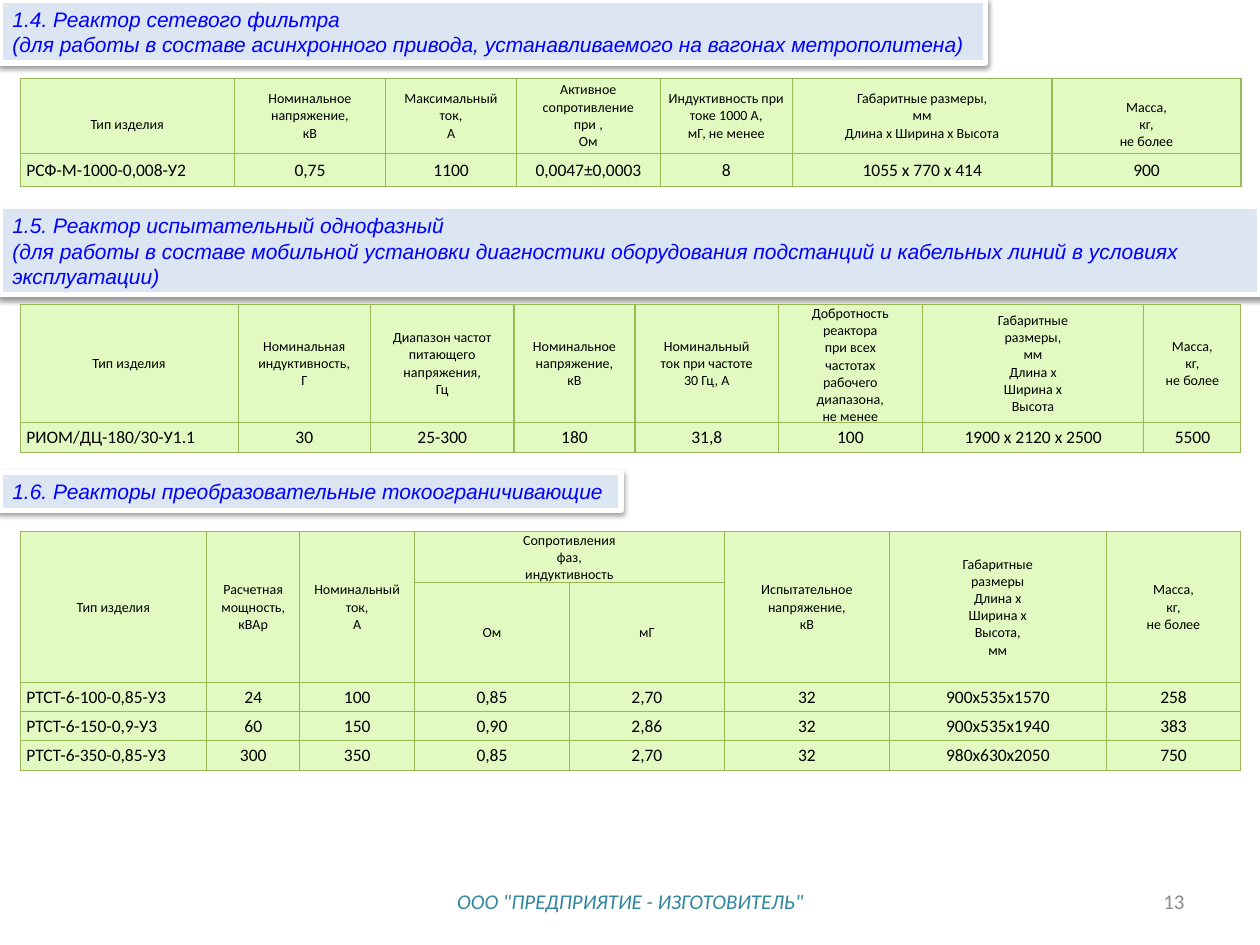
import pptx
import pptx.util
from lxml import etree
from pptx.dml.color import RGBColor
from pptx.enum.shapes import MSO_SHAPE
from pptx.enum.text import MSO_ANCHOR, MSO_AUTO_SIZE, PP_ALIGN
from pptx.oxml import parse_xml
from pptx.oxml.ns import nsdecls, qn

SLIDE_W = pptx.util.Inches(10)
SLIDE_H = pptx.util.Inches(7.5)
TABLE_LEFT = 1.6
HEAD_PT = 8
BODY_PT = 10
TITLE_PT = 12

BLACK = RGBColor(0, 0, 0)
WHITE = RGBColor(255, 255, 255)
BLUE = RGBColor(0, 0, 255)
PALE_BLUE = RGBColor(0xDC, 0xE6, 0xF2)
PALE_GREEN = RGBColor(0xE2, 0xFA, 0xC2)
GREEN = RGBColor(0x98, 0xB9, 0x55)
TEAL = RGBColor(0x31, 0x85, 0x9C)
GREY = RGBColor(0x8C, 0x8C, 0x8C)

MASS = "Масса,\nкг,\nне более"

FILTER_ROWS = [
    ["Тип изделия", "Номинальное напряжение,\nкВ", "Максимальный\nток,\nА",
     "Активное сопротивление\nпри ,\nОм", "Индуктивность при токе 1000 А,\nмГ, не менее",
     "Габаритные размеры,\nмм\nДлина х Ширина х Высота", MASS],
    ["РСФ-М-1000-0,008-У2", "0,75", "1100", "0,0047±0,0003", "8",
     "1055 х 770 х 414", "900"],
]
TEST_ROWS = [
    ["Тип изделия", "Номинальная\nиндуктивность,\nГ",
     "Диапазон частот\nпитающего\nнапряжения,\nГц", "Номинальное напряжение,\nкВ",
     "Номинальный\nток при частоте\n30 Гц, А",
     "Добротность\nреактора\nпри всех\nчастотах\nрабочего\nдиапазона,\nне менее",
     "Габаритные\nразмеры,\nмм\nДлина х\nШирина х\nВысота", MASS],
    ["РИОМ/ДЦ-180/30-У1.1", "30", "25-300", "180", "31,8", "100",
     "1900 х 2120 х 2500", "5500"],
]
LIMIT_ROWS = [
    ["Тип изделия", "Расчетная мощность, кВАр", "Номинальный ток,\nА",
     "Сопротивления\nфаз,\nиндуктивность", "", "Испытательное\nнапряжение,\nкВ",
     "Габаритные\nразмеры\nДлина x\nШирина x\nВысота,\nмм", MASS],
    ["", "", "", "Ом", "мГ", "", "", ""],
    ["РТСТ-6-100-0,85-У3", "24", "100", "0,85", "2,70", "32", "900х535х1570", "258"],
    ["РТСТ-6-150-0,9-У3", "60", "150", "0,90", "2,86", "32", "900х535х1940", "383"],
    ["РТСТ-6-350-0,85-У3", "300", "350", "0,85", "2,70", "32", "980х630х2050", "750"],
]


def across(percent):
    return round(SLIDE_W * percent / 100)


def down(percent):
    return round(SLIDE_H * percent / 100)


def write(tf, text, size=TITLE_PT, font="Calibri", color=BLACK, italic=False,
          align=PP_ALIGN.LEFT):
    for i, line in enumerate(text.split("\n")):
        p = tf.add_paragraph() if i else tf.paragraphs[0]
        p.alignment = align
        r = p.add_run()
        r.text = line
        r.font.size = pptx.util.Pt(size)
        r.font.name = font
        r.font.italic = italic
        r.font.color.rgb = color


def add_shadow(sp):
    sp.shadow.inherit = False
    effects = sp._element.spPr.find(qn("a:effectLst"))
    effects.append(parse_xml(
        f'<a:outerShdw {nsdecls("a")} blurRad="{pptx.util.Pt(3.1)}" '
        f'dist="{pptx.util.Pt(1.6)}" dir="5400000" rotWithShape="0">'
        '<a:srgbClr val="000000"><a:alpha val="38000"/></a:srgbClr></a:outerShdw>'))


def add_heading(s, top, width, height, text, wrap=False):
    sp = s.shapes.add_shape(MSO_SHAPE.RECTANGLE, 0, down(top), across(width), down(height))
    sp.fill.solid()
    sp.fill.fore_color.rgb = PALE_BLUE
    sp.line.color.rgb = WHITE
    sp.line.width = pptx.util.Pt(3)
    add_shadow(sp)
    tf = sp.text_frame
    tf.word_wrap = wrap
    tf.auto_size = MSO_AUTO_SIZE.SHAPE_TO_FIT_TEXT
    tf.vertical_anchor = MSO_ANCHOR.MIDDLE
    write(tf, text, font="Arial", color=BLUE, italic=True)


def format_cell(cell):
    cell.fill.solid()
    cell.fill.fore_color.rgb = PALE_GREEN
    cell.vertical_anchor = MSO_ANCHOR.MIDDLE
    cell.margin_left = cell.margin_right = pptx.util.Inches(0.05)
    cell.margin_top = cell.margin_bottom = 0
    tcPr = cell._tc.get_or_add_tcPr()
    for i, side in enumerate(("lnL", "lnR", "lnT", "lnB")):
        ln = etree.Element(qn(f"a:{side}"), w=str(pptx.util.Pt(0.75)))
        fill = etree.SubElement(ln, qn("a:solidFill"))
        etree.SubElement(fill, qn("a:srgbClr"), val=str(GREEN))
        tcPr.insert(i, ln)


def add_grid(s, top, widths, heights, rows, head_rows=1):
    frame = s.shapes.add_table(len(rows), len(widths), across(TABLE_LEFT), down(top),
                               across(sum(widths)), down(sum(heights)))
    table = frame.table
    table.first_row = table.horz_banding = False
    for column, width in zip(table.columns, widths):
        column.width = across(width)
    for row, height in zip(table.rows, heights):
        row.height = down(height)
    for i, values in enumerate(rows):
        for j, value in enumerate(values):
            cell = table.cell(i, j)
            format_cell(cell)
            if value:
                head = i < head_rows
                write(cell.text_frame, value, size=HEAD_PT if head else BODY_PT,
                      align=PP_ALIGN.CENTER if head or j else PP_ALIGN.LEFT)
    return table


def add_footer(s, left, width, text, **style):
    tf = s.shapes.add_textbox(across(left), down(92.67), across(width), down(5.33)).text_frame
    tf.word_wrap = True
    tf.vertical_anchor = MSO_ANCHOR.MIDDLE
    write(tf, text, **style)


def main():
    prs = pptx.Presentation()
    prs.slide_width, prs.slide_height = SLIDE_W, SLIDE_H
    s = prs.slides.add_slide(prs.slide_layouts[6])

    add_heading(s, 0, 78.2, 6.67,
                "1.4. Реактор сетевого фильтра\n(для работы в составе асинхронного привода, "
                "устанавливаемого на вагонах метрополитена)")
    filters = add_grid(s, 8.27, [17, 12, 10.4, 11.4, 10.5, 20.6, 15], [8, 3.47], FILTER_ROWS)
    for column in (0, 6):
        filters.cell(0, column).margin_top = pptx.util.Pt(9.75)

    add_heading(s, 21.87, 100, 9.33,
                "1.5. Реактор испытательный однофазный\n(для работы в составе мобильной установки "
                "диагностики оборудования подстанций и кабельных линий в условиях эксплуатации)",
                wrap=True)
    add_grid(s, 32.27, [17.3, 10.5, 11.4, 9.6, 11.4, 11.4, 17.6, 7.7], [8.93, 3.2], TEST_ROWS)

    add_heading(s, 50, 49.3, 4, "1.6. Реакторы преобразовательные токоограничивающие")
    limits = add_grid(s, 56.27, [14.8, 7.4, 9.1, 12.3, 12.3, 13.1, 17.2, 10.7],
                      [3.6, 3.6, 3.07, 3.07, 3.2], LIMIT_ROWS, head_rows=2)
    limits.cell(0, 3).merge(limits.cell(0, 4))
    for column in (0, 1, 2, 5, 6, 7):
        limits.cell(0, column).merge(limits.cell(1, column))

    add_footer(s, 34.2, 31.7, 'ООО "ПРЕДПРИЯТИЕ - ИЗГОТОВИТЕЛЬ"', color=TEAL, italic=True,
               align=PP_ALIGN.CENTER)
    add_footer(s, 71.7, 23.3, "13", color=GREY, align=PP_ALIGN.RIGHT)
    prs.save("out.pptx")


if __name__ == "__main__":
    main()
